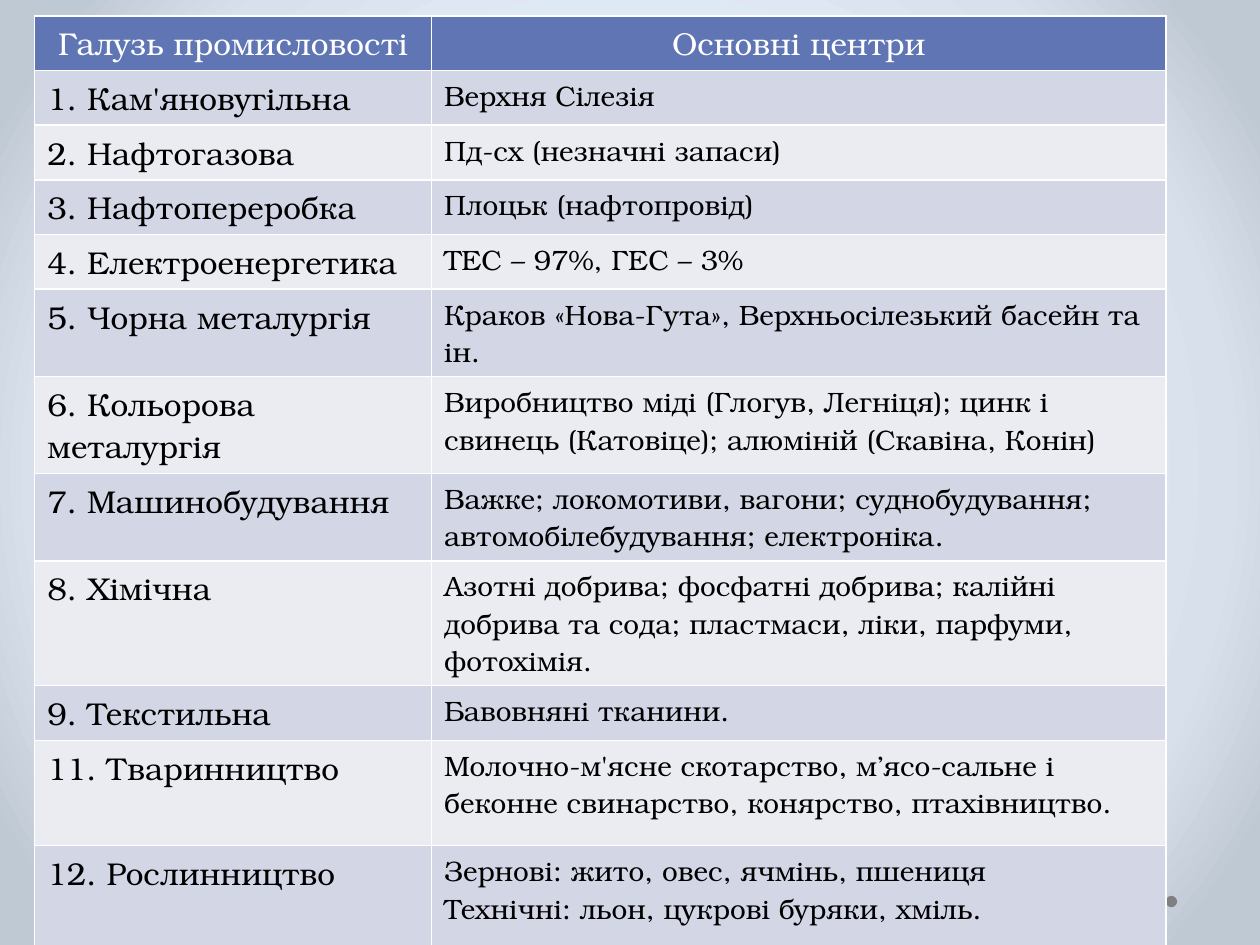
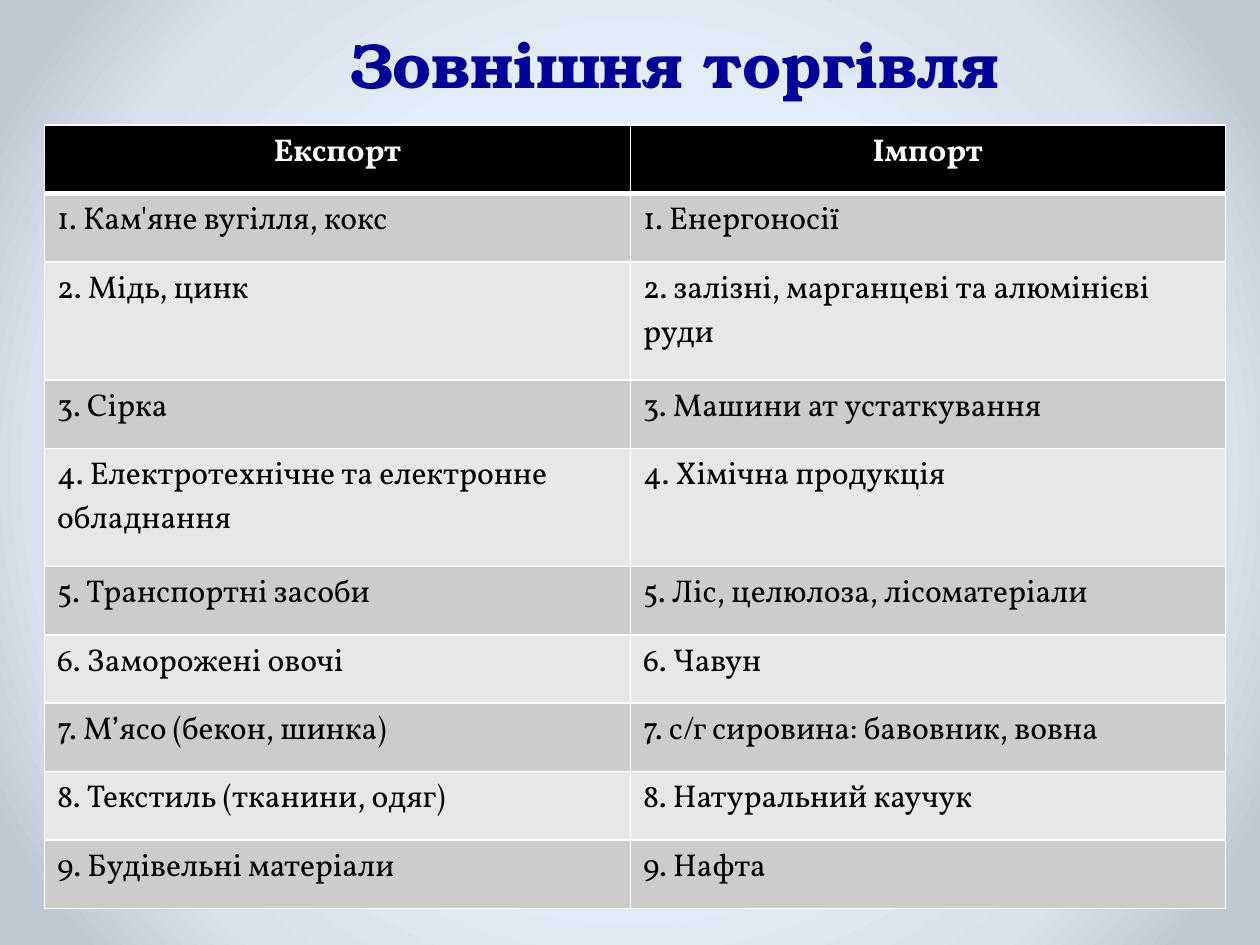
from pptx import Presentation
from pptx.dml.color import RGBColor
from pptx.enum.shapes import MSO_SHAPE
from pptx.enum.text import MSO_ANCHOR, PP_ALIGN
from pptx.oxml import parse_xml
from pptx.oxml.ns import nsdecls
from pptx.util import Cm, Pt

WHITE = RGBColor(0xFF, 0xFF, 0xFF)
BLACK = RGBColor(0x00, 0x00, 0x00)
NAVY = RGBColor(0x00, 0x00, 0x99)
GREY = RGBColor(0x80, 0x80, 0x80)
BLUE = RGBColor(0x60, 0x76, 0xB4)
BLUE_BANDS = RGBColor(0xD2, 0xD6, 0xE5), RGBColor(0xEA, 0xEC, 0xF2)
GREY_BANDS = RGBColor(0xCC, 0xCC, 0xCC), RGBColor(0xE7, 0xE7, 0xE7)
BACKDROP = {
    50: RGBColor(0xE3, 0xED, 0xF9),
    76: RGBColor(0xD8, 0xE0, 0xEB),
    92: RGBColor(0xBF, 0xC9, 0xD4),
}
BONUM = "TeX Gyre Bonum"
VOLLKORN = "Vollkorn"

INDUSTRIES = [
    ("Галузь промисловості", "Основні центри"),
    ("1. Кам'яновугільна", "Верхня Сілезія"),
    ("2. Нафтогазова", "Пд-сх (незначні запаси)"),
    ("3. Нафтопереробка", "Плоцьк (нафтопровід)"),
    ("4. Електроенергетика", "ТЕС – 97%, ГЕС – 3%"),
    ("5. Чорна металургія", "Краков «Нова-Гута», Верхньосілезький басейн та ін."),
    ("6. Кольорова металургія",
     "Виробництво міді (Глогув, Легніця); цинк і свинець (Катовіце); алюміній (Скавіна, Конін)"),
    ("7. Машинобудування",
     "Важке; локомотиви, вагони; суднобудування; автомобілебудування; електроніка."),
    ("8. Хімічна",
     "Азотні добрива; фосфатні добрива; калійні добрива та сода; пластмаси, ліки, парфуми, фотохімія."),
    ("9. Текстильна", "Бавовняні тканини."),
    ("11. Тваринництво",
     "Молочно-м'ясне скотарство, м’ясо-сальне і беконне свинарство, конярство, птахівництво."),
    ("12. Рослинництво",
     "Зернові: жито, овес, ячмінь, пшениця\nТехнічні: льон, цукрові буряки, хміль."),
]
INDUSTRY_HEIGHTS = [0.38] + [0.94] * 4 + [1.5, 1.65, 1.5, 2.11, 0.94, 2.12, 2.12]

TRADE = [
    ("Експорт", "Імпорт"),
    ("1. Кам'яне вугілля, кокс", "1. Енергоносії"),
    ("2. Мідь, цинк", "2. залізні, марганцеві та алюмінієві руди"),
    ("3. Сірка", "3. Машини ат устаткування"),
    ("4. Електротехнічне та електронне обладнання", "4. Хімічна продукція"),
    ("5. Транспортні засоби", "5. Ліс, целюлоза, лісоматеріали"),
    ("6. Заморожені овочі", "6. Чавун"),
    ("7. М’ясо (бекон, шинка)", "7. с/г сировина: бавовник, вовна"),
    ("8. Текстиль (тканини, одяг)", "8. Натуральний каучук"),
    ("9. Будівельні матеріали", "9. Нафта"),
]
TRADE_HEIGHTS = [2.38 if number in (2, 4) else 1.38 for number in range(len(TRADE))]


def style_font(font, color, **formats):
    """Apply a colour and the given format values to a font."""
    font.color.rgb = color
    for key, value in formats.items():
        setattr(font, key, value)


def add_dot(slide, left, top):
    """Add the small grey ornament dot."""
    dot = slide.shapes.add_shape(MSO_SHAPE.OVAL, Cm(left), Cm(top), Cm(0.23), Cm(0.23))
    dot.shadow.inherit = False
    dot.fill.solid()
    dot.fill.fore_color.rgb = GREY
    dot.line.fill.background()


def add_backdrop_slide(deck):
    """Add a blank slide with the shared radial gradient and footer dots."""
    slide = deck.slides.add_slide(deck.slide_layouts[6])
    stops = "".join(
        f'<a:gs pos="{place * 1000}"><a:srgbClr val="{color}"/></a:gs>'
        for place, color in BACKDROP.items())
    slide.element.cSld.insert(0, parse_xml(
        f'<p:bg {nsdecls("p", "a")}><p:bgPr><a:gradFill rotWithShape="1">'
        f'<a:gsLst>{stops}</a:gsLst><a:path path="circle">'
        '<a:fillToRect l="50000" t="50000" r="50000" b="50000"/></a:path>'
        '</a:gradFill><a:effectLst/></p:bgPr></p:bg>'))
    for left in (23.5, 1.57):
        add_dot(slide, left, 18.06)
    return slide


def add_title(slide, wording):
    """Add the bold centred heading."""
    heading = slide.shapes.add_textbox(Cm(1.35), Cm(0.53), Cm(24), Cm(1.63)).text_frame
    heading.word_wrap = True
    heading.vertical_anchor = MSO_ANCHOR.BOTTOM
    line = heading.paragraphs[0]
    line.alignment = PP_ALIGN.CENTER
    line._p.get_or_add_pPr().set("marL", str(Cm(0.5)))
    run = line.add_run()
    run.text = wording
    style_font(run.font, NAVY, name=BONUM, size=Pt(36), bold=True)


def border_cell(cell, top, bottom):
    """Draw white cell borders with the given top and bottom widths in points."""
    widths = {"lnL": 1, "lnR": 1, "lnT": top, "lnB": bottom}
    for place, (side, width) in enumerate(widths.items()):
        cell._tc.get_or_add_tcPr().insert(place, parse_xml(
            f'<a:{side} {nsdecls("a")} w="{Pt(width)}"><a:solidFill>'
            f'<a:srgbClr val="{WHITE}"/></a:solidFill></a:{side}>'))


def fill_cell(cell, wording, fill, color, align, **formats):
    """Write and colour one table cell."""
    cell.fill.solid()
    cell.fill.fore_color.rgb = fill
    cell.text = wording
    for line in cell.text_frame.paragraphs:
        line.alignment = align
        for run in line.runs:
            style_font(run.font, color, **formats)


def add_banded_table(slide, left, top, rows, widths, heights, header_fill, bands,
                     font, sizes, header_bold=False, header_rule=1):
    """Add a two-tone table under a centred header row."""
    table = slide.shapes.add_table(
        len(rows), len(widths), Cm(left), Cm(top), Cm(sum(widths)), Cm(sum(heights))).table
    table.first_row = table.horz_banding = False
    for column, width in zip(table.columns, widths):
        column.width = Cm(width)
    for number, (row, height) in enumerate(zip(rows, heights)):
        table.rows[number].height = Cm(height)
        for place, wording in enumerate(row):
            cell = table.cell(number, place)
            if number == 0:
                fill_cell(cell, wording, header_fill, WHITE, PP_ALIGN.CENTER,
                          name=font, size=Pt(18), bold=header_bold)
            else:
                fill_cell(cell, wording, bands[(number - 1) % 2], BLACK, PP_ALIGN.LEFT,
                          name=font, size=Pt(sizes[place]), bold=False)
            border_cell(cell, top=header_rule if number == 1 else 1,
                        bottom=header_rule if number == 0 else 1)


def main():
    """Build the industry and foreign trade slides."""
    deck = Presentation()
    deck.slide_width, deck.slide_height = Cm(25.4), Cm(19.05)

    industry = add_backdrop_slide(deck)
    add_banded_table(industry, 0.7, 0.32, INDUSTRIES, (8, 14.81), INDUSTRY_HEIGHTS,
                     BLUE, BLUE_BANDS, BONUM, (18, 16))

    trade = add_backdrop_slide(deck)
    add_title(trade, "Зовнішня торгівля")
    add_banded_table(trade, 0.9, 2.52, TRADE, (11.81, 11.99), TRADE_HEIGHTS,
                     BLACK, GREY_BANDS, VOLLKORN, (18, 18), header_bold=True, header_rule=3)

    deck.save("out.pptx")


if __name__ == "__main__":
    main()
